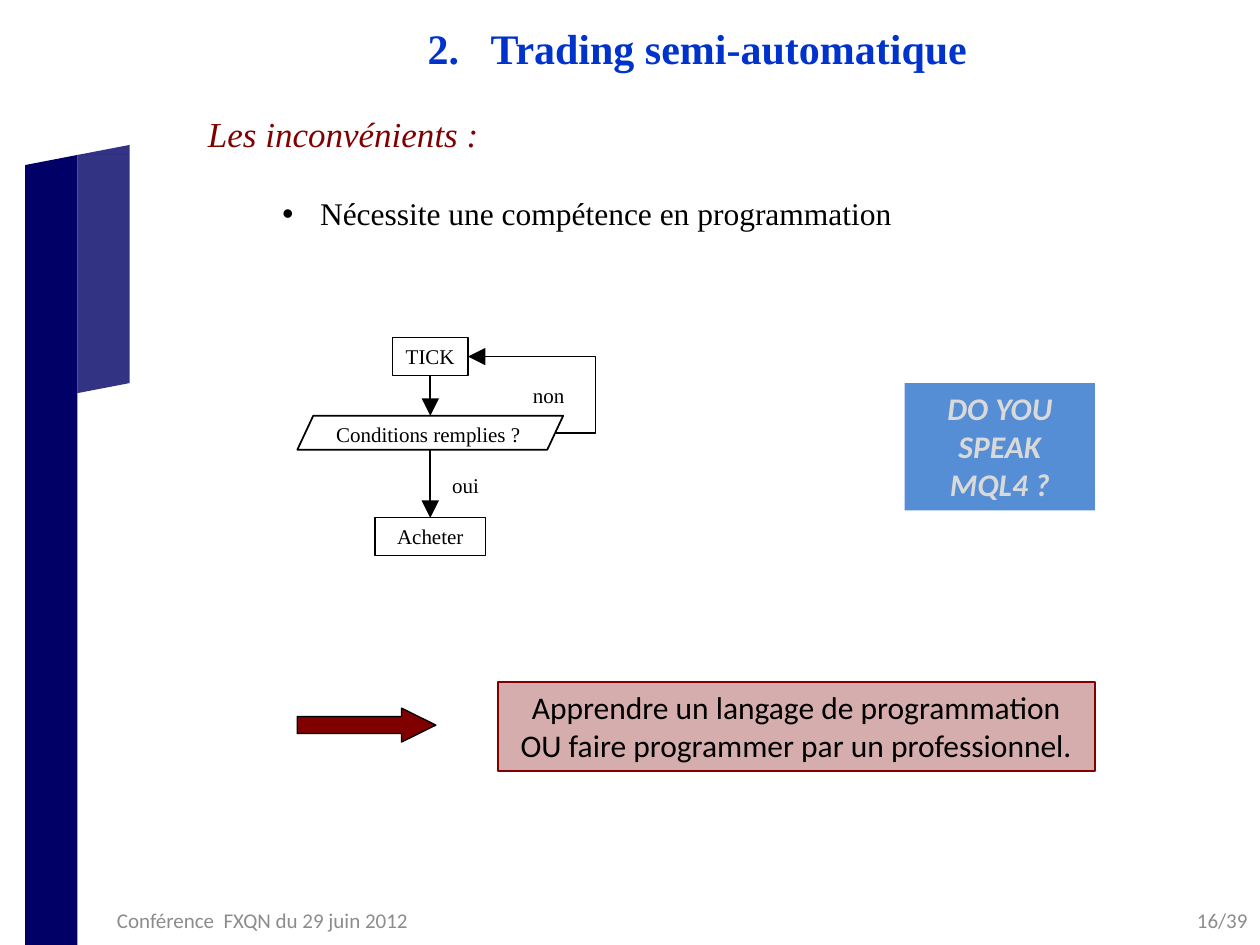
from lxml.etree import SubElement as Sub
from pptx import Presentation
from pptx.dml.color import RGBColor
from pptx.enum.shapes import MSO_CONNECTOR as Conn, MSO_SHAPE as Geo
from pptx.enum.text import MSO_ANCHOR as Anchor, MSO_AUTO_SIZE as Fit, PP_ALIGN as Align
from pptx.oxml.ns import qn
from pptx.util import Inches, Pt

SERIF, SANS = "Times New Roman", "Calibri"
NAVY, MAROON, BLACK, GREY = "000066", "800000", "000000", "8C8C8C"


def color(code):
    """Turn a hex string into a colour."""
    return RGBColor.from_string(code)


def inch(*nums):
    """Turn numbers into lengths."""
    return [Inches(n) for n in nums]


def move(holder, box):
    """Place a shape in a box."""
    holder.left, holder.top, holder.width, holder.height = inch(*box)


def write(para, text, font, size, code, bold=False, italic=False, align=Align.LEFT):
    """Add one formatted run to a paragraph."""
    para.alignment = align
    run = para.add_run()
    run.text = text
    face = run.font
    face.name, face.size, face.bold, face.italic = font, Pt(size), bold, italic
    face.color.rgb = color(code)


def bullet(para, left, hang, tag, **attrs):
    """Set the indent and bullet of a paragraph."""
    props = para._p.get_or_add_pPr()
    props.set("marL", str(Inches(left)))
    props.set("indent", str(Inches(hang)))
    if tag == "buChar":
        Sub(props, qn("a:buFont"), typeface="Arial")
    Sub(props, qn("a:" + tag), **attrs)


def shape(slide, geo, box, fill=None, line=None, width=0.75, alpha=None):
    """Add a preset shape with its fill and line."""
    item = slide.shapes.add_shape(geo, *inch(*box))
    item.shadow.inherit = False
    if fill:
        item.fill.solid()
        item.fill.fore_color.rgb = color(fill)
    else:
        item.fill.background()
    if alpha:
        paint = item._element.spPr.find(qn("a:solidFill"))[0]
        Sub(paint, qn("a:alpha"), val=str(alpha * 1000))
    if line:
        item.line.color.rgb = color(line)
        item.line.width = Pt(width)
    else:
        item.line.fill.background()
    return item


def fill_text(item, text, *style, anchor=Anchor.TOP, **more):
    """Write wrapped text into a shape."""
    frame = item.text_frame
    frame.word_wrap = True
    frame.vertical_anchor = anchor
    write(frame.paragraphs[0], text, *style, **more)


def label(slide, box, text, *style, **more):
    """Add a text box."""
    fill_text(slide.shapes.add_textbox(*inch(*box)), text, *style, **more)


def arrow(slide, kind, start, end):
    """Add a connector with an arrowhead at its end."""
    link = slide.shapes.add_connector(kind, *inch(*start, *end))
    link.line.color.rgb = color(BLACK)
    link.line.width = Pt(1)
    Sub(link.line._get_or_add_ln(), qn("a:tailEnd"), type="triangle", w="lg", len="lg")
    Sub(link._element.spPr, qn("a:effectLst"))
    return link


def ribbon(slide, box):
    """Draw the folded ribbon on the left edge."""
    left, top, width, height = box
    half, tip, drop = width / 2, 0.08, 1.81
    mid = left + half
    shape(slide, Geo.RECTANGLE, (left, top + 2 * tip, half, height - 2 * tip), NAVY)
    shape(slide, Geo.RECTANGLE, (mid, top + tip, half, drop), NAVY, alpha=80)
    for x, y, alpha, turn in (
        (left, top + tip, None, 0),
        (mid, top, 80, 0),
        (mid, top + tip + drop, 80, 180),
    ):
        fold = shape(slide, Geo.RIGHT_TRIANGLE, (x, y, half, tip), NAVY, alpha=alpha)
        fold.rotation = turn
        fold._element.spPr.get_or_add_xfrm().set("flipH", "1")


def heading(slide, box):
    """Fill the numbered title."""
    title = slide.shapes.title
    move(title, box)
    frame = title.text_frame
    frame.auto_size = Fit.NONE
    frame.vertical_anchor = Anchor.MIDDLE
    para = frame.paragraphs[0]
    bullet(para, 0.5, -0.5, "buAutoNum", type="arabicPeriod", startAt="2")
    write(para, "Trading semi-automatique", SERIF, 24, "0033CC", bold=True, align=Align.CENTER)


def points(slide, box):
    """Fill the list of drawbacks."""
    body = slide.placeholders[1]
    move(body, box)
    frame = body.text_frame
    frame.auto_size = Fit.NONE
    head = frame.paragraphs[0]
    bullet(head, 0, 0, "buNone")
    head.space_before = Pt(0)
    write(head, "Les inconvénients :", SERIF, 20, MAROON, italic=True)
    item = frame.add_paragraph()
    item.level = 1
    bullet(item, 0.89, -0.3, "buChar", char="•")
    item.space_before = Pt(23)
    write(item, "Nécessite une compétence en programmation", SERIF, 18, BLACK)


def chart(slide, box):
    """Draw the flow chart from tick to purchase."""
    left, top, width, height = box
    mid = left + width / 2
    row = 0.3
    test, low = top + 0.62, top + height - row
    style = (SERIF, 12, BLACK)

    def step(y, wide, text):
        """Add one framed step."""
        item = shape(slide, Geo.RECTANGLE, (mid - wide / 2, y, wide, row), line=BLACK)
        fill_text(item, text, *style, align=Align.CENTER)
        return item

    tick = step(top, 0.6, "TICK")
    buy = step(low, 0.88, "Acheter")
    gate = shape(slide, Geo.PARALLELOGRAM, (left, test, width, 0.27), line=BLACK, width=1)
    gate.adjustments[0] = 0.467
    for x, y, wide, text in (
        (mid - 0.98, test, 1.93, "Conditions remplies ?"),
        (mid - 0.02, top + 1.02, 0.6, "oui"),
        (mid + 0.64, top + 0.31, 0.6, "non"),
    ):
        label(slide, (x, y, wide, row), text, *style, align=Align.CENTER)
    arrow(slide, Conn.STRAIGHT, (mid, top + row), (mid, test)).begin_connect(tick, 2)
    arrow(slide, Conn.STRAIGHT, (mid, test + 0.27), (mid, low)).end_connect(buy, 0)
    loop = arrow(slide, Conn.ELBOW, (left + 2.05, test + 0.14), (mid + 0.3, top + row / 2))
    guides = loop._element.spPr.find(qn("a:prstGeom")).get_or_add_avLst()
    Sub(guides, qn("a:gd"), name="adj1", fmla="val -45600")


def advice(slide, box):
    """Draw the arrow and the advice beside it."""
    left, top, width, height = box
    point = shape(slide, Geo.RIGHT_ARROW, (left, top + 0.21, 1.1, 0.27), MAROON, BLACK)
    point.adjustments[0], point.adjustments[1] = 0.5, 1.01
    gap = 1.59
    note = shape(slide, Geo.RECTANGLE, (left + gap, top, width - gap, height), MAROON, MAROON, 1, 32)
    text = "Apprendre un langage de programmation OU faire programmer par un professionnel."
    fill_text(note, text, SANS, 18, BLACK, align=Align.CENTER)


def quiz(slide, box):
    """Draw the blue question box."""
    item = shape(slide, Geo.RECTANGLE, box, "558ED5")
    fill_text(item, "DO YOU SPEAK MQL4 ?", SANS, 18, "D9D9D9",
              bold=True, italic=True, align=Align.CENTER)


def footer(slide, box):
    """Write the event and the page number."""
    left, top, width, height = box
    style = (SANS, 12, GREY)
    label(slide, (left, top, 3.17, height), "Conférence  FXQN du 29 juin 2012",
          *style, anchor=Anchor.MIDDLE)
    label(slide, (left + width - 2.33, top, 2.33, height), "16/39",
          *style, anchor=Anchor.MIDDLE, align=Align.RIGHT)


def main():
    """Build and save the slide."""
    deck = Presentation()
    deck.slide_width, deck.slide_height = inch(10, 7.5)
    slide = deck.slides.add_slide(deck.slide_layouts[1])
    ribbon(slide, (0.2, 1.15, 0.83, 6.35))
    heading(slide, (2.03, 0.13, 7.01, 0.5))
    points(slide, (1.55, 0.84, 7.93, 1.04))
    advice(slide, (2.36, 5.41, 6.33, 0.71))
    quiz(slide, (7.18, 3.04, 1.51, 1.01))
    chart(slide, (2.36, 2.68, 2.11, 1.73))
    footer(slide, (0.83, 7.1, 9.17, 0.4))
    deck.save("out.pptx")


if __name__ == "__main__":
    main()
